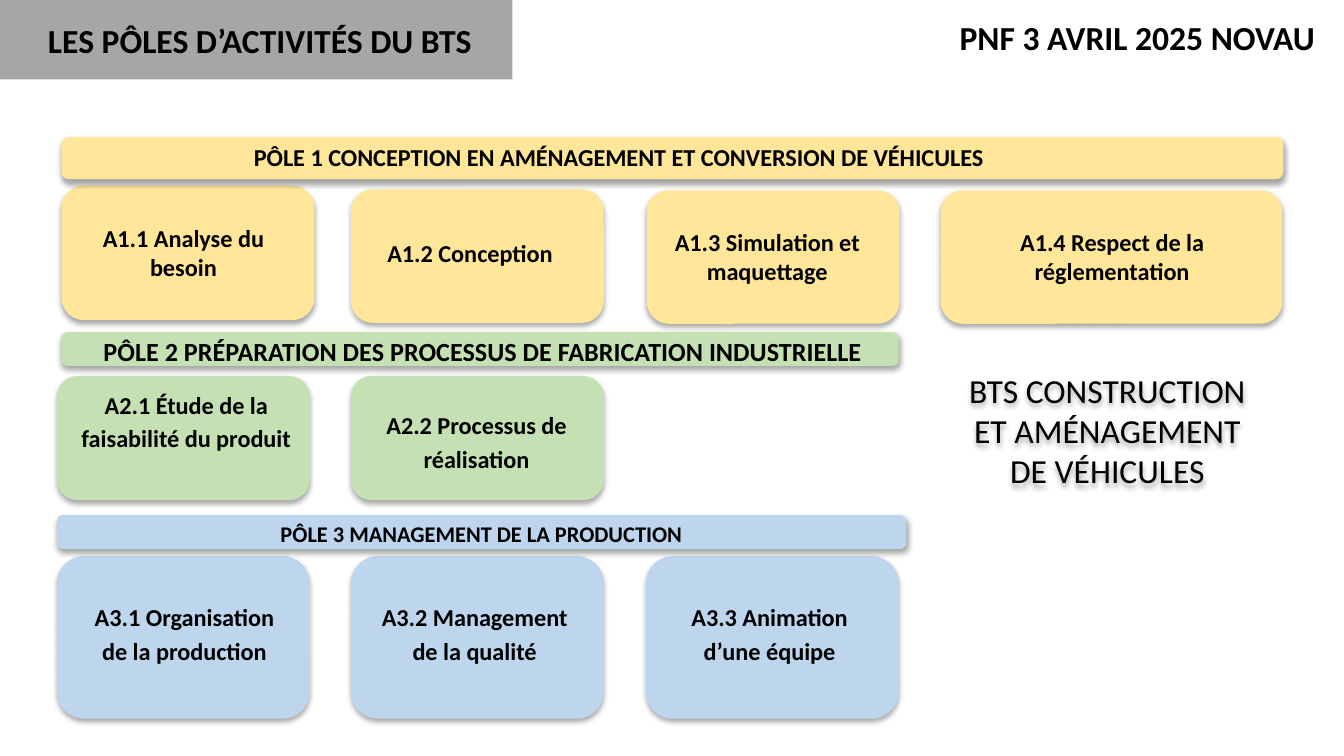
from lxml import etree
from pptx import Presentation
from pptx.dml.color import RGBColor
from pptx.enum.shapes import MSO_SHAPE
from pptx.enum.text import MSO_ANCHOR, MSO_AUTO_SIZE, PP_ALIGN
from pptx.oxml.ns import qn
from pptx.util import Pt

RECT = MSO_SHAPE.RECTANGLE
ROUNDED = MSO_SHAPE.FLOWCHART_ALTERNATE_PROCESS
LEFT, CENTER = PP_ALIGN.LEFT, PP_ALIGN.CENTER
TOP, MIDDLE = MSO_ANCHOR.TOP, MSO_ANCHOR.MIDDLE
NO_FIT = MSO_AUTO_SIZE.NONE

COLORS = {
    "text": "000000",
    "band": "A6A6A6",
    "yellow": "FFE698",
    "green": "C5E0B3",
    "blue": "BDD6EE",
}
TITLE_ONLY = 5
CARD_W = 135.5


class SlideBuilder:
    font = "Calibri"

    def __init__(self, slide):
        self.slide = slide

    def set_text(self, sp, text, size=13, bold=True, align=CENTER, spacing=1.0,
                 anchor=TOP, wrap=True):
        tf = sp.text_frame
        tf.text = text
        tf.word_wrap = wrap
        tf.auto_size = NO_FIT
        tf.vertical_anchor = anchor
        p = tf.paragraphs[0]
        p.alignment = align
        p.line_spacing = spacing
        font = p.runs[0].font
        font.name = self.font
        font.size = Pt(size)
        font.bold = bold
        font.color.rgb = RGBColor.from_string(COLORS["text"])

    def place(self, sp, box):
        sp.left, sp.top, sp.width, sp.height = map(Pt, box)

    def shadow(self, sp):
        """Give the shape a soft shadow that falls straight down."""
        sp.shadow.inherit = False
        effects = sp._element.spPr.find(qn("a:effectLst"))
        outer = etree.SubElement(effects, qn("a:outerShdw"), blurRad=str(Pt(3.1)),
                                 dist=str(Pt(1.8)), dir="5400000")
        color = etree.SubElement(outer, qn("a:srgbClr"), val="000000")
        etree.SubElement(color, qn("a:alpha"), val="35000")

    def block(self, box, color, kind=ROUNDED, shadow=True):
        sp = self.slide.shapes.add_shape(kind, *map(Pt, box))
        sp.fill.solid()
        sp.fill.fore_color.rgb = RGBColor.from_string(COLORS[color])
        sp.line.fill.background()
        if shadow:
            self.shadow(sp)
        else:
            sp.shadow.inherit = False
        return sp

    def label(self, box, text, **style):
        sp = self.slide.shapes.add_textbox(*map(Pt, box))
        self.set_text(sp, text, **style)
        return sp

    def title(self, box, text):
        sp = self.slide.shapes.title
        self.place(sp, box)
        self.set_text(sp, text, size=18, align=LEFT, wrap=False)
        self.slide.shapes._spTree.append(sp._element)  # in front of the band


# left, top, width, height of each card, then its text and the text's box
ACTIVITIES = {
    ("yellow", 1.0): [
        ((33, 99.5, CARD_W, 72), "A1.1 Analyse du besoin", (34.5, 116, 127.5, 39)),
        ((188, 101.5, CARD_W, 71.5), "A1.2 Conception", (188, 124, 127.5, 44.5)),
        ((346.5, 102, CARD_W, 71.5), "A1.3 Simulation et maquettage",
         (351.5, 118, 119, 39)),
        ((504, 102, 183, 71.5), "A1.4 Respect de la réglementation",
         (515.5, 118, 160.5, 39)),
    ],
    ("green", 1.15): [
        ((30.5, 201.5, CARD_W, 66.5), "A2.1 Étude de la faisabilité du produit",
         (36, 203, 127.5, 60.5)),
        ((188, 201.5, CARD_W, 66.5), "A2.2 Processus de réalisation",
         (191.5, 214, 127.5, 42.5)),
    ],
    ("blue", 1.15): [
        ((30.5, 298, CARD_W, 87), "A3.1 Organisation de la production",
         (39, 317, 119.5, 42.5)),
        ((188, 298, CARD_W, 87), "A3.2 Management de la qualité",
         (193.5, 317, 121.5, 42.5)),
        ((346, 298, CARD_W, 87), "A3.3 Animation d’une équipe",
         (351.5, 317, 121.5, 42.5)),
    ],
}


def main():
    prs = Presentation()
    prs.slide_width, prs.slide_height = Pt(720), Pt(405)
    s = SlideBuilder(prs.slides.add_slide(prs.slide_layouts[TITLE_ONLY]))

    s.block((0, 0, 274.5, 42.5), "band", kind=RECT, shadow=False)
    s.title((18.5, 7, 243.5, 29), "LES PÔLES D’ACTIVITÉS DU BTS")
    s.label((507, 5.5, 213, 29), "PNF 3 AVRIL 2025 NOVAU", size=18, align=LEFT)

    for (color, spacing), cards in ACTIVITIES.items():
        for card_box, text, text_box in cards:
            s.block(card_box, color)
            s.label(text_box, text, spacing=spacing)

    s.block((33, 73.5, 654.5, 22.5), "yellow")
    s.label((18.5, 70.5, 625.5, 24.5),
            "PÔLE 1 CONCEPTION EN AMÉNAGEMENT ET CONVERSION DE VÉHICULES",
            spacing=1.15)
    s.block((33, 178, 448.5, 18), "green")
    s.label((34.5, 173.5, 448.5, 24),
            "PÔLE 2 PRÉPARATION DES PROCESSUS DE FABRICATION INDUSTRIELLE",
            size=14, spacing=1.15)
    header = s.block((30.5, 276, 455, 18), "blue")
    s.set_text(header, "PÔLE 3 MANAGEMENT DE LA PRODUCTION", size=12, spacing=1.15,
               anchor=MIDDLE)

    diploma = s.label((504, 194.5, 178.5, 72.5),
                      "BTS CONSTRUCTION ET AMÉNAGEMENT DE VÉHICULES",
                      size=18, bold=False)
    s.shadow(diploma)

    prs.save("out.pptx")


if __name__ == "__main__":
    main()
